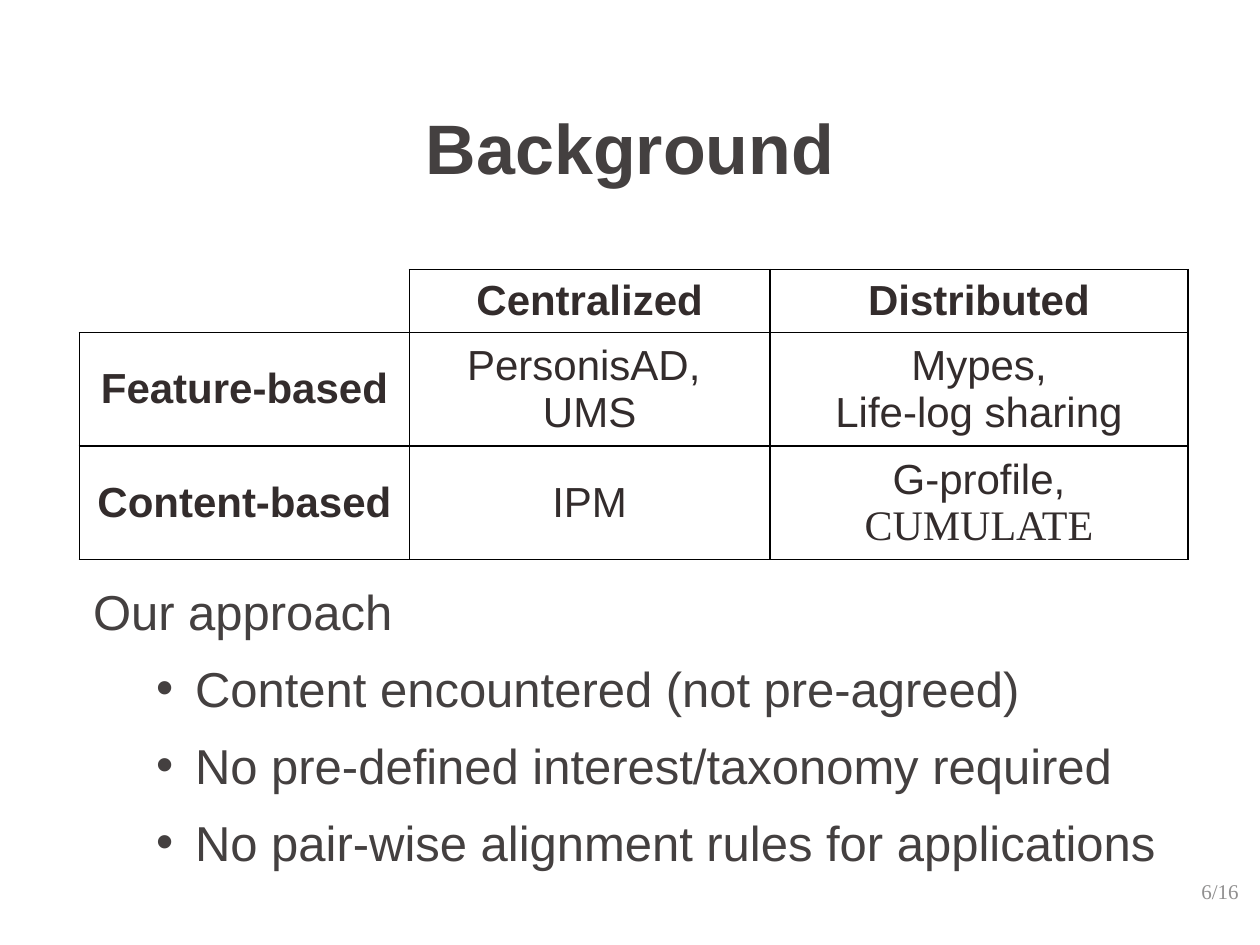
from lxml.etree import SubElement
from pptx import Presentation
from pptx.dml.color import RGBColor
from pptx.enum.text import MSO_ANCHOR, PP_ALIGN
from pptx.oxml import parse_xml
from pptx.oxml.ns import nsdecls, qn
from pptx.util import Inches, Pt

# Content: a cell is a list of paragraphs, a paragraph a list of (text, style)
TITLE = "Background"
PAGE = "6/16"
GRID = [
    [[], [[("Centralized", "head")]], [[("Distributed", "head")]]],
    [[[("Feature-based", "head")]],
     [[("PersonisAD, \nUMS", "cell")]],
     [[("Mypes,", "cell")], [("Life-log sharing", "cell")]]],
    [[[("Content-based", "head")]],
     [[("IPM", "cell")]],
     [[("G-profile, ", "cell"), ("CUMULATE", "serif")]]],
]
LEAD = "Our approach"
POINTS = [
    "Content encountered (not pre-agreed)",
    "No pre-defined interest/taxonomy required",
    "No pair-wise alignment rules for applications",
]

# Theme: font, size, colour, bold
SANS, SERIF = "Arial", "Times New Roman"
THEME = {
    "title": (SANS, 40, "444040", True),
    "head": (SANS, 24, "332C2C", True),
    "cell": (SANS, 24, "332C2C", False),
    "serif": (SERIF, 24, "332C2C", False),
    "body": (SANS, 28, "444040", False),
    "page": (SERIF, 12, "908F8F", False),
}
RULE = "000000"
COLS, ROWS = [2.62, 2.86, 3.32], [0.5, 0.9, 0.9]


def style(font, name):
    face, size, color, bold = THEME[name]
    for key, value in {"name": face, "size": Pt(size), "bold": bold}.items():
        setattr(font, key, value)
    font.color.rgb = RGBColor.from_string(color)


def write(frame, paras, **form):
    for i, runs in enumerate(paras):
        para = frame.paragraphs[0] if i == 0 else frame.add_paragraph()
        for key, value in form.items():
            setattr(para, key, value)
        for text, name in runs:
            for j, line in enumerate(text.split("\n")):
                if j:
                    para.add_line_break()
                run = para.add_run()
                run.text = line
                style(run.font, name)


def box(slide, place, anchor, paras, **form):
    frame = slide.shapes.add_textbox(*map(Inches, place)).text_frame
    frame.word_wrap = True
    frame.vertical_anchor = anchor
    write(frame, paras, **form)
    return frame


def edge(cell, sides):
    props = cell._tc.get_or_add_tcPr()
    for i, side in enumerate("LRTB"):
        paint = (f'<a:solidFill><a:srgbClr val="{RULE}"/></a:solidFill>'
                 if side in sides else "<a:noFill/>")
        props.insert(i, parse_xml(
            f'<a:ln{side} {nsdecls("a")} w="{Pt(1)}">{paint}</a:ln{side}>'))


def bullet(para):
    props = para._p.get_or_add_pPr()
    props.set("marL", str(Inches(0.81)))
    props.set("indent", str(Inches(-0.31)))
    SubElement(props, qn("a:buFont")).set("typeface", SANS)
    SubElement(props, qn("a:buChar")).set("char", "•")


deck = Presentation()
deck.slide_width, deck.slide_height = Inches(10), Inches(7.5)
slide = deck.slides.add_slide(deck.slide_layouts[6])

# Page number and title
box(slide, (7.6, 6.96, 2.33, 0.23), MSO_ANCHOR.MIDDLE,
    [[(PAGE, "page")]], alignment=PP_ALIGN.RIGHT)
box(slide, (0.75, 0.53, 8.5, 1.26), MSO_ANCHOR.MIDDLE,
    [[(TITLE, "title")]], alignment=PP_ALIGN.CENTER)

# Table with an open top-left corner
place = (0.63, 2.14, sum(COLS), sum(ROWS))
table = slide.shapes.add_table(len(ROWS), len(COLS), *map(Inches, place)).table
table.first_row = table.horz_banding = False
for col, width in zip(table.columns, COLS):
    col.width = Inches(width)
for row, height in zip(table.rows, ROWS):
    row.height = Inches(height)
INSET = {"margin_left": 0.08, "margin_right": 0.08,
         "margin_top": 0.02, "margin_bottom": 0.02}
for r, line in enumerate(GRID):
    for c, paras in enumerate(line):
        cell = table.cell(r, c)
        cell.fill.background()
        cell.vertical_anchor = MSO_ANCHOR.MIDDLE
        for key, value in INSET.items():
            setattr(cell, key, Inches(value))
        write(cell.text_frame, paras, alignment=PP_ALIGN.CENTER)
        edge(cell, "LRTB" if paras else "RB")

# Approach list
frame = box(slide, (0.64, 4.52, 8.92, 2.64), MSO_ANCHOR.TOP,
            [[(text, "body")] for text in [LEAD] + POINTS], line_spacing=1.1)
for para in frame.paragraphs[1:]:
    para.level = 1
    para.space_before = Pt(7)
    bullet(para)

deck.save("out.pptx")
